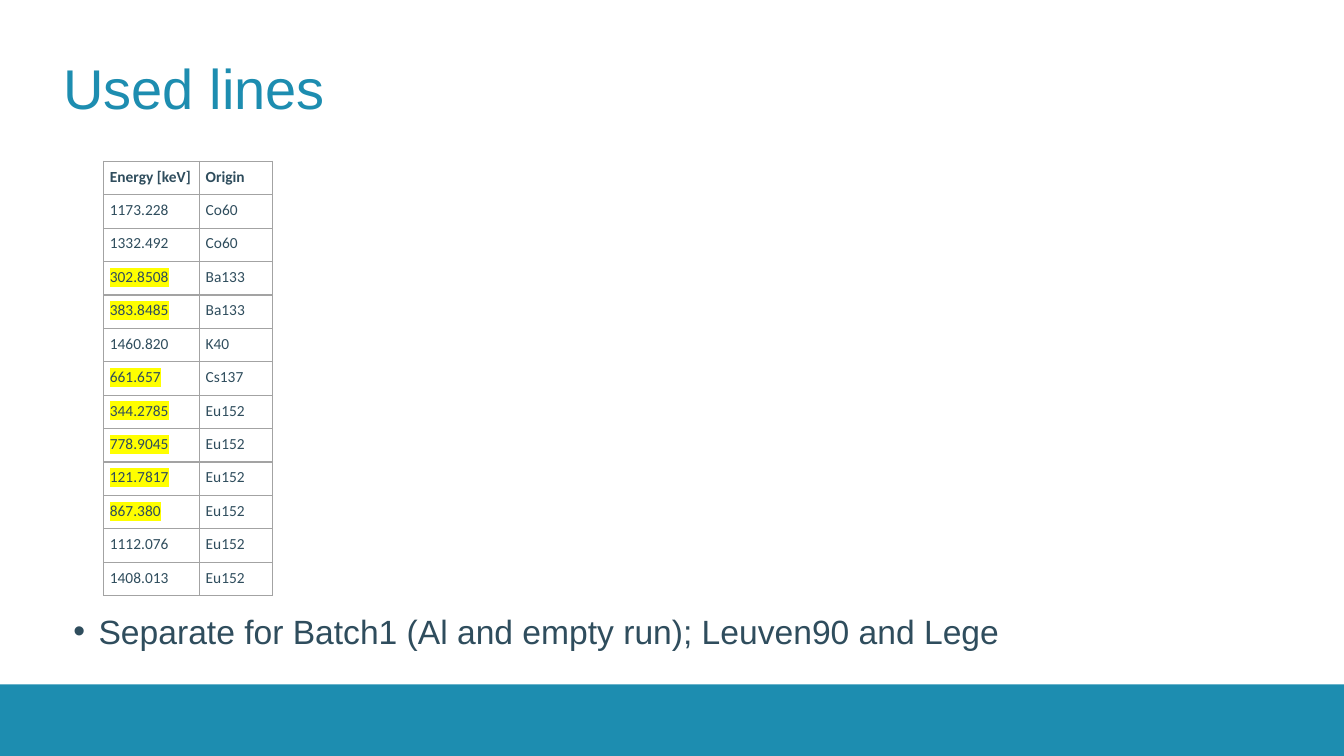
from dataclasses import dataclass

import pptx
import pptx.dml.color
import pptx.enum.shapes
import pptx.enum.text
import pptx.oxml.ns
import pptx.util
from lxml import etree

Inches = pptx.util.Inches
Pt = pptx.util.Pt
qn = pptx.oxml.ns.qn


@dataclass(frozen=True)
class Theme:
    accent: str = "1D8DB0"
    text: str = "2F4D5D"
    border: str = "A3A3A3"
    highlight: str = "FFFF00"
    font: str = "Arial"
    table_font: str = "Calibri"
    title_size: int = 40
    body_size: int = 24
    table_size: int = 11
    border_width: int = 1


THEME = Theme()

HEADER = ("Energy [keV]", "Origin")
GAMMA_LINES = [
    ("1173.228", "Co60"),
    ("1332.492", "Co60"),
    ("302.8508", "Ba133"),
    ("383.8485", "Ba133"),
    ("1460.820", "K40"),
    ("661.657", "Cs137"),
    ("344.2785", "Eu152"),
    ("778.9045", "Eu152"),
    ("121.7817", "Eu152"),
    ("867.380", "Eu152"),
    ("1112.076", "Eu152"),
    ("1408.013", "Eu152"),
]
HIGHLIGHTED = {"302.8508", "383.8485", "661.657", "344.2785", "778.9045", "121.7817", "867.380"}


def rgb(value):
    return pptx.dml.color.RGBColor.from_string(value)


def set_font(paragraph, name, size, color, bold=False):
    paragraph.font.name = name
    paragraph.font.size = Pt(size)
    paragraph.font.color.rgb = rgb(color)
    paragraph.font.bold = bold


def add_footer_band(slide, left, top, width, height):
    band = slide.shapes.add_shape(
        pptx.enum.shapes.MSO_SHAPE.RECTANGLE, Inches(left), Inches(top), Inches(width), Inches(height)
    )
    band.shadow.inherit = False
    band.fill.solid()
    band.fill.fore_color.rgb = rgb(THEME.accent)
    band.line.fill.background()


def add_text_box(slide, text, left, top, width, height):
    shape = slide.shapes.add_textbox(Inches(left), Inches(top), Inches(width), Inches(height))
    shape.text_frame.word_wrap = True
    shape.text_frame.text = text
    return shape.text_frame


def add_title(slide, text, *box):
    frame = add_text_box(slide, text, *box)
    frame.margin_left = frame.margin_right = frame.margin_top = frame.margin_bottom = 0
    frame.vertical_anchor = pptx.enum.text.MSO_ANCHOR.MIDDLE
    set_font(frame.paragraphs[0], THEME.font, THEME.title_size, THEME.accent)


def add_bullet(slide, text, *box):
    paragraph = add_text_box(slide, text, *box).paragraphs[0]
    properties = paragraph._p.get_or_add_pPr()
    properties.set("marL", str(Inches(0.25)))
    properties.set("indent", str(Inches(-0.25)))
    etree.SubElement(properties, qn("a:buFont")).set("typeface", THEME.font)
    etree.SubElement(properties, qn("a:buChar")).set("char", "•")
    set_font(paragraph, THEME.font, THEME.body_size, THEME.text)


def add_borders(cell):
    properties = cell._tc.get_or_add_tcPr()
    for side in ("a:lnL", "a:lnR", "a:lnT", "a:lnB"):
        line = etree.SubElement(properties, qn(side), w=str(Pt(THEME.border_width)))
        fill = etree.SubElement(line, qn("a:solidFill"))
        etree.SubElement(fill, qn("a:srgbClr")).set("val", THEME.border)


def highlight(run):
    mark = etree.SubElement(run._r.get_or_add_rPr(), qn("a:highlight"))
    etree.SubElement(mark, qn("a:srgbClr")).set("val", THEME.highlight)


def fill_cell(cell, text, bold):
    cell.margin_left = cell.margin_right = cell.margin_top = cell.margin_bottom = Inches(0.06)
    add_borders(cell)
    cell.fill.background()
    cell.text = text
    paragraph = cell.text_frame.paragraphs[0]
    set_font(paragraph, THEME.table_font, THEME.table_size, THEME.text, bold)
    if text in HIGHLIGHTED:
        highlight(paragraph.runs[0])


def add_line_table(slide, left, top, widths, height):
    rows = [HEADER, *GAMMA_LINES]
    table = slide.shapes.add_table(
        len(rows), len(widths), Inches(left), Inches(top), Inches(sum(widths)), Inches(height)
    ).table
    table.first_row = False
    table.horz_banding = False
    for column, width in zip(table.columns, widths):
        column.width = Inches(width)
    for row_index, values in enumerate(rows):
        for column_index, text in enumerate(values):
            fill_cell(table.cell(row_index, column_index), text, row_index == 0)


def build_used_lines(presentation):
    slide = presentation.slides.add_slide(presentation.slide_layouts[6])
    add_footer_band(slide, 0, 6.79, 13.33, 0.71)
    add_title(slide, "Used lines", 0.63, 0.23, 12.07, 1.26)
    add_bullet(
        slide, "Separate for Batch1 (Al and empty run); Leuven90 and Lege", 0.63, 6.01, 12.07, 0.68
    )
    add_line_table(slide, 1.03, 1.6, (0.95, 0.72), 4.31)


def main():
    presentation = pptx.Presentation()
    presentation.slide_width = Inches(13.33)
    presentation.slide_height = Inches(7.5)
    build_used_lines(presentation)
    presentation.save("out.pptx")


if __name__ == "__main__":
    main()
